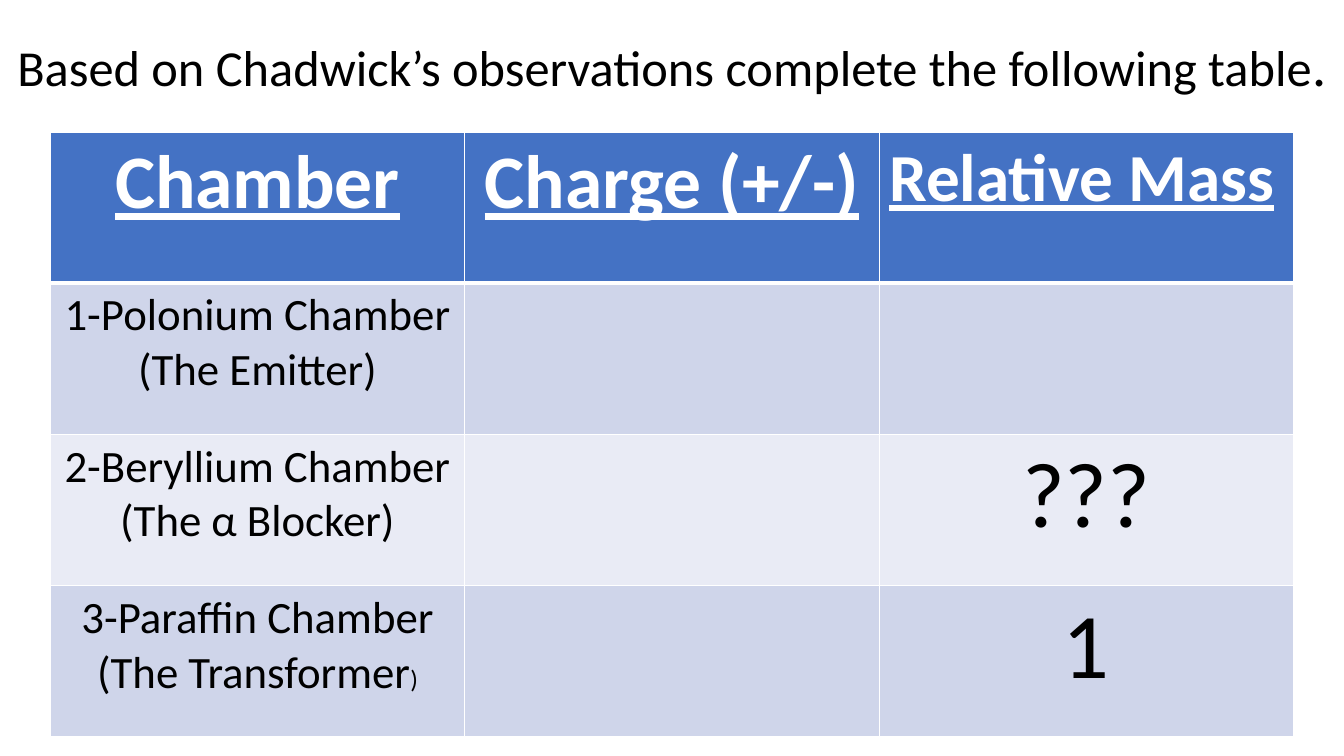
from lxml.etree import SubElement
from pptx import Presentation
from pptx.dml.color import RGBColor
from pptx.enum.text import MSO_ANCHOR, PP_ALIGN
from pptx.oxml.ns import qn
from pptx.util import Inches, Pt

FONT = "Calibri"
WHITE, BLACK, BLUE = "FFFFFF", "000000", "4472C4"
BANDS = ("CFD5EA", "E9EBF5")
MARGIN, TABLE_TOP, ROW_HEIGHT = 0.5, 1.31, 1.5

# Each cell is a list of (text, size) runs
HEADER = [[("Chamber", 54)], [("Charge (+/-)", 54)], [("Relative Mass", 48)]]
BODY = [
    [[("1-Polonium Chamber (The Emitter)", 32)], [], []],
    [[("2-Beryllium Chamber (The α Blocker)", 32)], [], [("???", 66)]],
    [[("3-Paraffin Chamber (The Transformer", 32), (")", 18)], [], [("1", 66)]],
]


def rgb(hex_color):
    return RGBColor.from_string(hex_color)


def write_runs(p, runs, color, bold=False, align=PP_ALIGN.CENTER):
    p.alignment = align
    for text, size in runs:
        r = p.add_run()
        r.text = text
        r.font.name = FONT
        r.font.size = Pt(size)
        r.font.bold = bold
        r.font.underline = bold
        r.font.color.rgb = rgb(color)


def set_borders(cell, top=1, bottom=1):
    tc_pr = cell._tc.get_or_add_tcPr()
    for side, width in (("L", 1), ("R", 1), ("T", top), ("B", bottom)):
        ln = SubElement(tc_pr, qn(f"a:ln{side}"), w=str(Pt(width)))
        SubElement(SubElement(ln, qn("a:solidFill")), qn("a:srgbClr"), val=WHITE)


def fill_cell(cell, color):
    cell.fill.solid()
    cell.fill.fore_color.rgb = rgb(color)


def add_title(slide):
    sp = slide.shapes.title
    sp.left, sp.top = Inches(-0.13), Inches(0.25)
    sp.width, sp.height = Inches(13.59), Inches(0.77)
    tf = sp.text_frame
    tf.word_wrap = True
    tf.vertical_anchor = MSO_ANCHOR.TOP
    sentence = "Based on Chadwick’s observations complete the following table"
    write_runs(tf.paragraphs[0], [(sentence, 36), (".", 40)], BLACK)


def add_chamber_table(slide, width):
    rows = [HEADER] + BODY
    table = slide.shapes.add_table(
        len(rows), len(HEADER), Inches(MARGIN), Inches(TABLE_TOP),
        width - 2 * Inches(MARGIN), Inches(ROW_HEIGHT * len(rows))).table
    for i, row in enumerate(rows):
        is_header = i == 0
        for j, runs in enumerate(row):
            cell = table.cell(i, j)
            # The rule under the header is thicker
            set_borders(cell, top=3 if i == 1 else 1, bottom=3 if is_header else 1)
            fill_cell(cell, BLUE if is_header else BANDS[(i - 1) % 2])
            left = is_header and j == len(row) - 1
            write_runs(cell.text_frame.paragraphs[0], runs,
                       WHITE if is_header else BLACK, bold=is_header,
                       align=PP_ALIGN.LEFT if left else PP_ALIGN.CENTER)


def main():
    prs = Presentation()
    prs.slide_width, prs.slide_height = Inches(13.33), Inches(7.5)
    slide = prs.slides.add_slide(prs.slide_layouts[5])
    add_title(slide)
    add_chamber_table(slide, prs.slide_width)
    prs.save("out.pptx")


if __name__ == "__main__":
    main()
